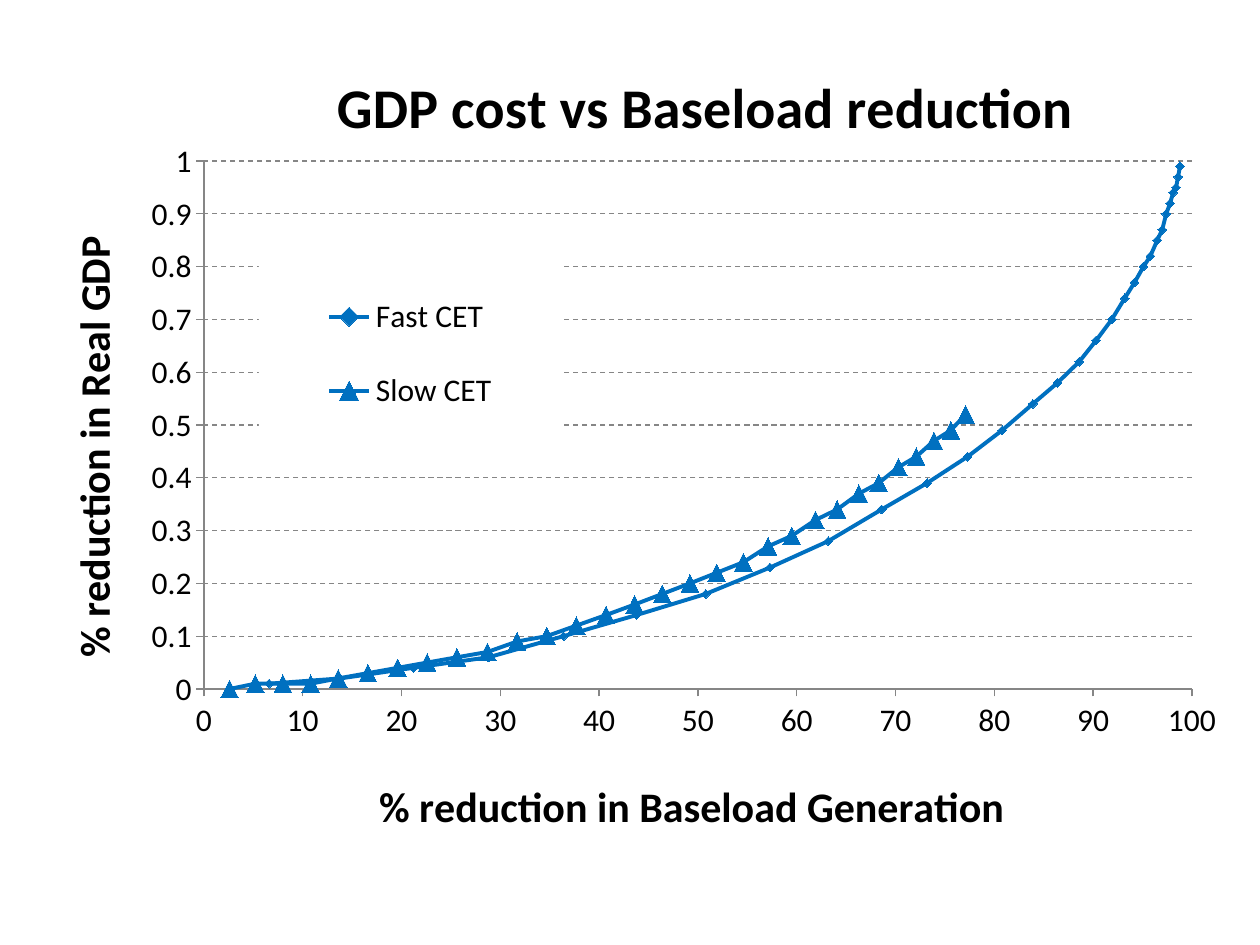
from lxml.etree import fromstring
from pptx import Presentation
from pptx.chart.data import XyChartData
from pptx.dml.color import RGBColor
from pptx.enum.chart import (XL_CHART_TYPE, XL_LEGEND_POSITION,
                             XL_MARKER_STYLE, XL_TICK_MARK)
from pptx.enum.dml import MSO_LINE
from pptx.oxml.ns import nsdecls
from pptx.util import Inches, Pt

COLORS = {"text": "000000", "series": "0070C0", "axis": "868686", "legend": "FFFFFF"}
FONT = "Calibri"

FAST_X = [6.6, 13.8, 21.2, 28.8, 36.4, 43.8, 50.8, 57.3, 63.2, 68.6,
          73.2, 77.3, 80.8, 83.9, 86.4, 88.6, 90.3, 91.9, 93.2, 94.2,
          95.1, 95.8, 96.5, 97.0, 97.4, 97.8, 98.1, 98.4, 98.6, 98.8]
FAST_Y = [0.01, 0.02, 0.04, 0.06, 0.1, 0.14, 0.18, 0.23, 0.28, 0.34,
          0.39, 0.44, 0.49, 0.54, 0.58, 0.62, 0.66, 0.7, 0.74, 0.77,
          0.8, 0.82, 0.85, 0.87, 0.9, 0.92, 0.94, 0.95, 0.97, 0.99]
SLOW_X = [2.6, 5.2, 8.0, 10.8, 13.6, 16.6, 19.6, 22.6, 25.6, 28.7,
          31.7, 34.7, 37.7, 40.7, 43.6, 46.4, 49.2, 51.9, 54.6, 57.1,
          59.5, 61.9, 64.1, 66.3, 68.3, 70.3, 72.1, 73.9, 75.6, 77.1]
SLOW_Y = [0, 0.01, 0.01, 0.01, 0.02, 0.03, 0.04, 0.05, 0.06, 0.07,
          0.09, 0.1, 0.12, 0.14, 0.16, 0.18, 0.2, 0.22, 0.24, 0.27,
          0.29, 0.32, 0.34, 0.37, 0.39, 0.42, 0.44, 0.47, 0.49, 0.52]
SERIES = [
    ("Fast CET", FAST_X, FAST_Y, XL_MARKER_STYLE.DIAMOND, 5),
    ("Slow CET", SLOW_X, SLOW_Y, XL_MARKER_STYLE.TRIANGLE, 10),
]


def color(name):
    return RGBColor.from_string(COLORS[name])


def set_font(font, size, bold=False):
    font.name, font.size, font.bold = FONT, Pt(size), bold
    font.color.rgb = color("text")


def place(element, index, left, top, width=None, height=None, inner=False):
    """Give a chart part a manual layout, in fractions of the chart area."""
    for old in element.xpath("c:layout"):
        element.remove(old)
    target = '<c:layoutTarget val="inner"/>' if inner else ""
    sizes = "" if width is None else f'<c:w val="{width}"/><c:h val="{height}"/>'
    element.insert(index, fromstring(
        f'<c:layout {nsdecls("c")}><c:manualLayout>{target}'
        '<c:xMode val="edge"/><c:yMode val="edge"/>'
        f'<c:x val="{left}"/><c:y val="{top}"/>{sizes}'
        '</c:manualLayout></c:layout>'))


def add_title(owner, text, size):
    """Title a chart or an axis, which both hold a text frame."""
    owner.has_title = True
    title = owner.chart_title if hasattr(owner, "chart_title") else owner.axis_title
    span = title.text_frame.paragraphs[0].add_run()
    span.text = text
    set_font(span.font, size, bold=True)


def style_axis(axis, title, maximum, step):
    add_title(axis, title, 24)
    axis.minimum_scale, axis.maximum_scale, axis.major_unit = 0, maximum, step
    axis.major_tick_mark = XL_TICK_MARK.OUTSIDE
    axis.minor_tick_mark = XL_TICK_MARK.NONE
    axis.format.line.color.rgb = color("axis")
    axis.format.line.width = Pt(0.75)
    axis.tick_labels.number_format = "General"
    axis.tick_labels.number_format_is_linked = False
    set_font(axis.tick_labels.font, 18)


def style_series(series, marker_style, marker_size):
    series.smooth = True
    series.format.line.color.rgb = color("series")
    series.format.line.width = Pt(2.25)
    marker = series.marker
    marker.style, marker.size = marker_style, marker_size
    marker.format.fill.solid()
    marker.format.fill.fore_color.rgb = color("series")
    marker.format.line.color.rgb = color("series")


def add_legend(chart):
    chart.has_legend = True
    legend = chart.legend
    legend.position = XL_LEGEND_POSITION.RIGHT
    legend.include_in_layout = True
    set_font(legend.font, 18)
    element = chart._chartSpace.xpath(".//c:legend")[0]
    place(element, 1, 0.19, 0.29, 0.25, 0.22)
    element.xpath("c:overlay")[0].addnext(fromstring(
        f'<c:spPr {nsdecls("c", "a")}><a:solidFill>'
        f'<a:srgbClr val="{COLORS["legend"]}"/></a:solidFill></c:spPr>'))


def add_cost_chart(page, left, top, width, height):
    data = XyChartData()
    for name, xs, ys, _, _ in SERIES:
        entry = data.add_series(name)
        for x, y in zip(xs, ys):
            entry.add_data_point(x, y)
    chart = page.shapes.add_chart(
        XL_CHART_TYPE.XY_SCATTER_SMOOTH, left, top, width, height, data).chart
    set_font(chart.font, 10)
    chart.plots[0].vary_by_categories = False

    add_title(chart, "GDP cost vs Baseload reduction", 32)
    chart.chart_title.include_in_layout = True
    style_axis(chart.category_axis, "% reduction in Baseload Generation", 100, 10)
    style_axis(chart.value_axis, "% reduction in Real GDP", 1, 0.1)
    chart.category_axis.has_major_gridlines = False
    chart.value_axis.has_major_gridlines = True
    grid = chart.value_axis.major_gridlines.format.line
    grid.color.rgb = color("axis")
    grid.width = Pt(0.75)
    grid.dash_style = MSO_LINE.DASH

    for series, (_, _, _, style, size) in zip(chart.plots[0].series, SERIES):
        style_series(series, style, size)
    add_legend(chart)

    space = chart._chartSpace
    place(space.xpath(".//c:plotArea")[0], 0, 0.1445, 0.169, 0.816, 0.633, inner=True)
    title_corners = [(0.246, 0.045), (0.283, 0.9), (0.024, 0.25)]
    for title, corner in zip(space.xpath(".//c:title"), title_corners):
        place(title, 1, *corner)


def main():
    deck = Presentation()
    deck.slide_width, deck.slide_height = Inches(10), Inches(7.5)
    page = deck.slides.add_slide(deck.slide_layouts[6])
    add_cost_chart(page, Inches(0.23), Inches(0.16), Inches(9.61), Inches(6.62))
    deck.save("out.pptx")


if __name__ == "__main__":
    main()
